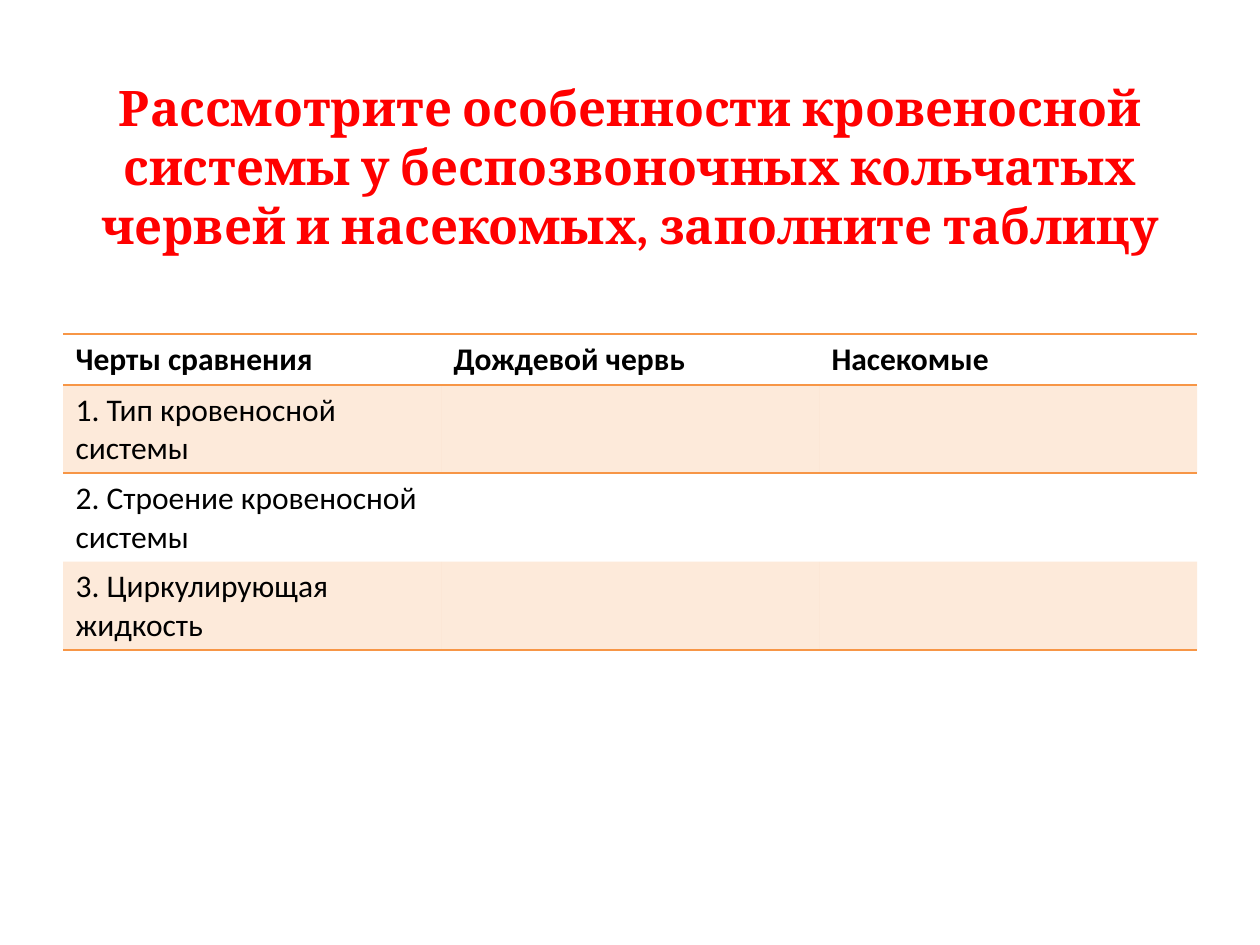
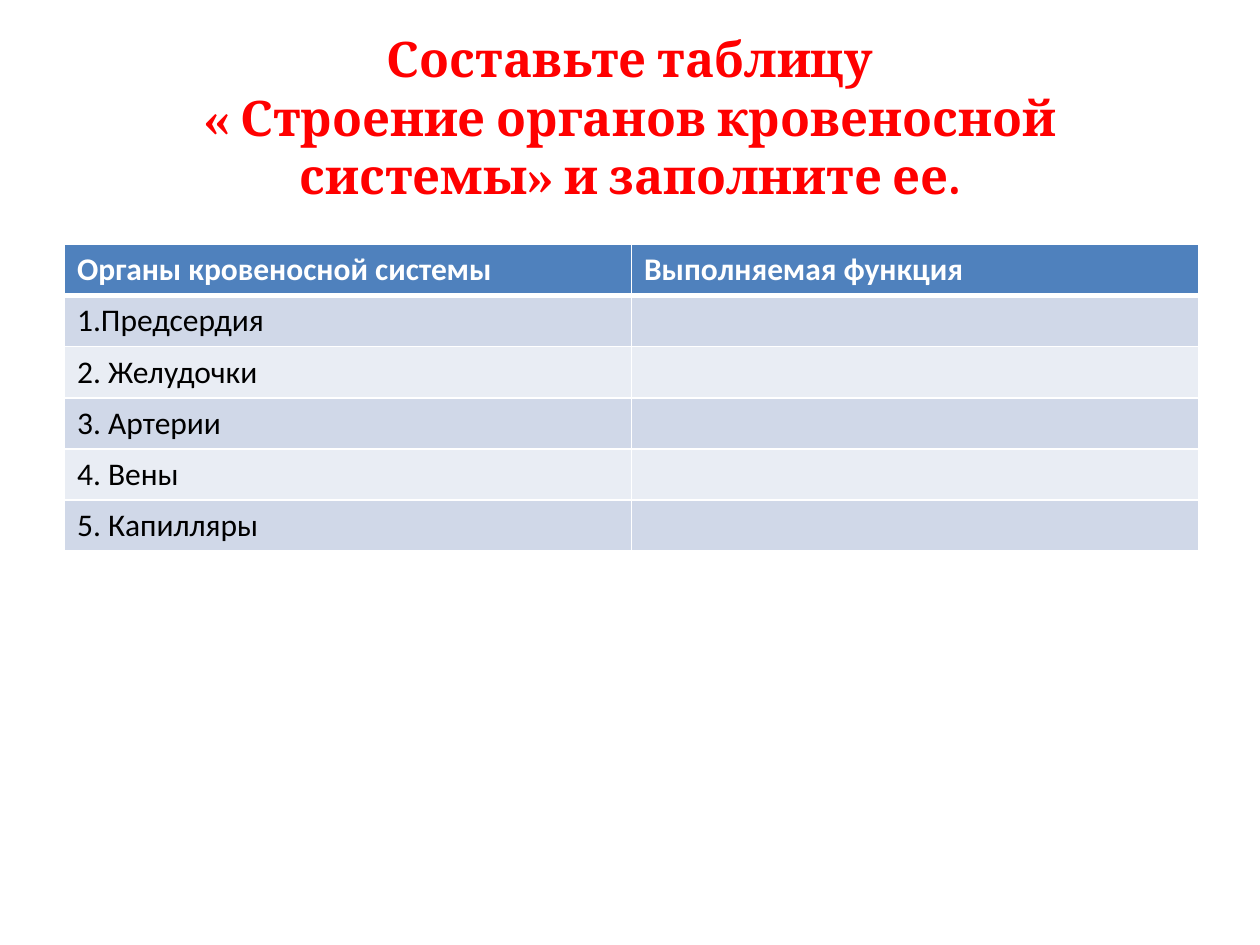
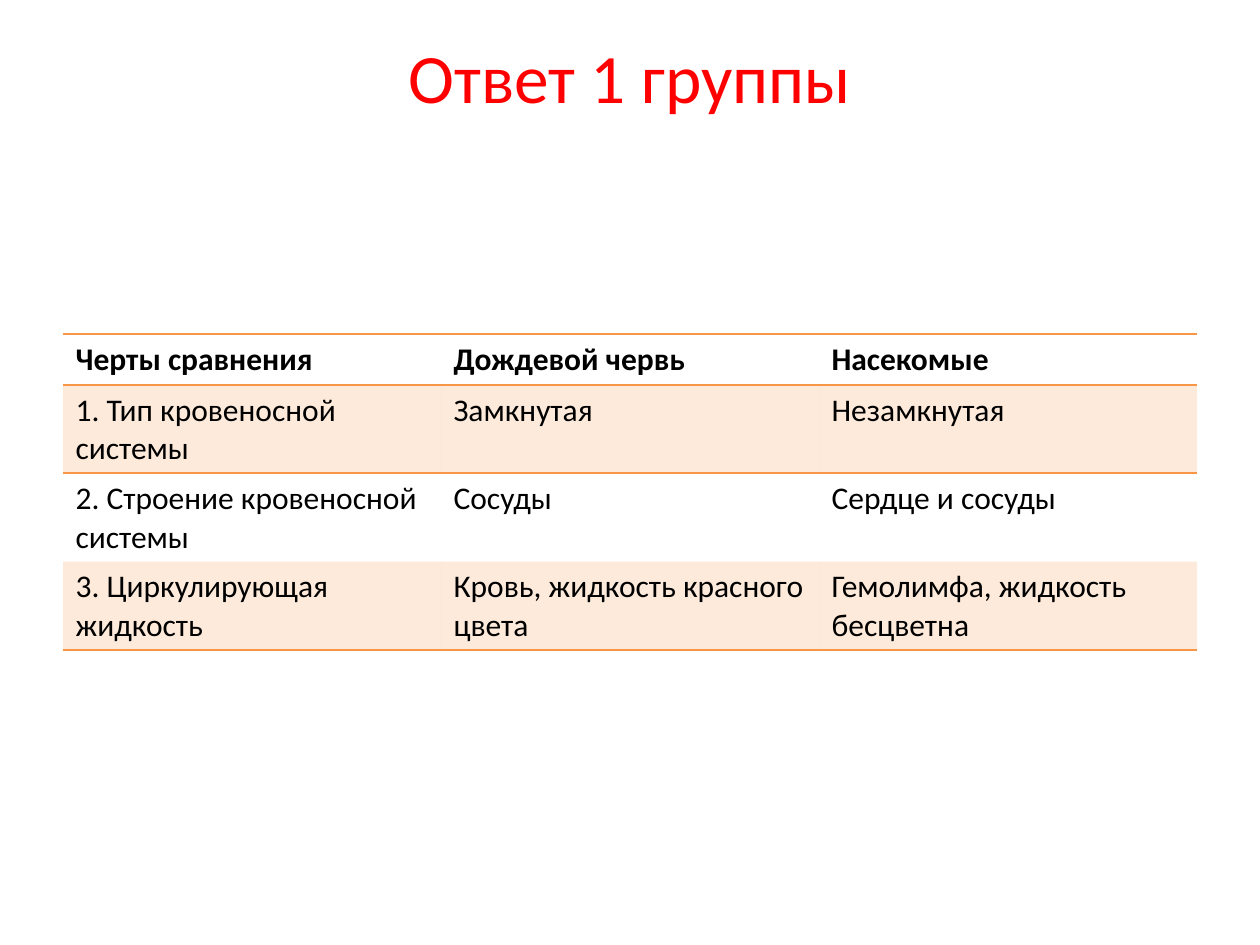
"""Build three lesson slides with tables about the circulatory system."""
from pptx import Presentation
from pptx.dml.color import RGBColor
from pptx.enum import text
from pptx.oxml import ns, xmlchemy
from pptx.util import Cm, Pt

RED = RGBColor(0xFF, 0x00, 0x00)
BLACK = RGBColor(0x00, 0x00, 0x00)
WHITE = RGBColor(0xFF, 0xFF, 0xFF)
ORANGE = RGBColor(0xF7, 0x96, 0x46)
BLUE = RGBColor(0x4F, 0x81, 0xBD)
BLUE_BAND = RGBColor(0xD0, 0xD8, 0xE8)
PALE_BAND = RGBColor(0xE9, 0xED, 0xF4)

NO_STYLE = "{2D5ABB26-0587-4C30-8999-92F81FD0307C}"
MARGIN = 1.27
CONTENT_WIDTH = 22.86
HEADER_HEIGHT = 1.03

FEATURES = ["1. Тип кровеносной системы", "2. Строение кровеносной системы", "3. Циркулирующая жидкость"]
WORM = ["Замкнутая", "Сосуды", "Кровь, жидкость красного цвета"]
INSECTS = ["Незамкнутая", "Сердце и сосуды", "Гемолимфа, жидкость бесцветна"]
COMPARISON_HEADER = ("Черты сравнения", "Дождевой червь", "Насекомые")
ORGANS = ["1.Предсердия", "2. Желудочки", "3. Артерии", "4. Вены", "5. Капилляры"]

LIGHT = {"left": MARGIN, "top": 6.73, "row": 1.78, "ink": BLACK, "line": ORANGE,
         "header_line": 1, "grid": False, "header": None, "bands": (ORANGE, None), "opacity": 20}
MEDIUM = {"left": 1.3, "top": 4.93, "row": HEADER_HEIGHT, "ink": WHITE, "line": WHITE,
          "header_line": 3, "grid": True, "header": BLUE, "bands": (BLUE_BAND, PALE_BAND), "opacity": 100}

SLIDES = [
    ("Рассмотрите особенности кровеносной системы у беспозвоночных кольчатых червей "
     "и насекомых, заполните таблицу",
     5.16, "Cambria", 28, True, LIGHT,
     [COMPARISON_HEADER] + [(feature, "", "") for feature in FEATURES]),
    ("Составьте таблицу\v« Строение органов кровеносной системы» и заполните ее.",
     3.18, "Cambria", 28, True, MEDIUM,
     [("Органы кровеносной системы", "Выполняемая функция")] + [(organ, "") for organ in ORGANS]),
    ("Ответ 1 группы",
     1.55, "Calibri", 39.6, False, LIGHT,
     [COMPARISON_HEADER] + list(zip(FEATURES, WORM, INSECTS))),
]


def add_border(cell, side, color, width):
    """Draw one edge of a cell; sides must be added in the order L, R, T, B."""
    line = xmlchemy.OxmlElement(f"a:ln{side}")
    line.set("w", str(Pt(width)))
    fill = xmlchemy.OxmlElement("a:solidFill")
    tint = xmlchemy.OxmlElement("a:srgbClr")
    tint.set("val", str(color))
    fill.append(tint)
    line.append(fill)
    cell._tc.get_or_add_tcPr().append(line)


def fill_cell(cell, color, opacity):
    """Fill a cell with a colour at a percentage of opacity, or leave it clear."""
    if color is None:
        cell.fill.background()
        return
    cell.fill.solid()
    cell.fill.fore_color.rgb = color
    if opacity < 100:
        alpha = xmlchemy.OxmlElement("a:alpha")
        alpha.set("val", str(opacity * 1000))
        cell._tc.tcPr.find(ns.qn("a:solidFill"))[0].append(alpha)


deck = Presentation()
deck.slide_width, deck.slide_height = Cm(25.4), Cm(19.05)

for title, title_height, font_name, size, bold, look, rows in SLIDES:
    page = deck.slides.add_slide(deck.slide_layouts[6])

    box = page.shapes.add_textbox(Cm(MARGIN), Cm(0.76), Cm(CONTENT_WIDTH), Cm(title_height))
    box.text_frame.word_wrap = True
    box.text_frame.vertical_anchor = text.MSO_ANCHOR.MIDDLE
    box.text_frame.text = title
    para = box.text_frame.paragraphs[0]
    para.alignment = text.PP_ALIGN.CENTER
    para.font.name, para.font.size, para.font.bold = font_name, Pt(size), bold
    para.font.color.rgb = RED

    last = len(rows) - 1
    table_height = HEADER_HEIGHT + last * look["row"]
    frame = page.shapes.add_table(len(rows), len(rows[0]), Cm(look["left"]), Cm(look["top"]),
                                  Cm(CONTENT_WIDTH), Cm(table_height))
    table = frame.table
    table._tbl.tblPr.find(ns.qn("a:tableStyleId")).text = NO_STYLE

    for index, row in enumerate(rows):
        is_header = index == 0
        table.rows[index].height = Cm(HEADER_HEIGHT if is_header else look["row"])
        widths = {
            "L": 1 if look["grid"] else 0,
            "R": 1 if look["grid"] else 0,
            "T": look["header_line"] if index == 1 else int(is_header or look["grid"]),
            "B": look["header_line"] if is_header else int(index == last or look["grid"]),
        }
        for column, words in enumerate(row):
            cell = table.cell(index, column)
            for side, width in widths.items():
                if width:
                    add_border(cell, side, look["line"], width)
            fill_cell(cell, look["header"] if is_header else look["bands"][(index - 1) % 2], look["opacity"])
            cell.text = words
            para = cell.text_frame.paragraphs[0]
            para.font.name, para.font.size, para.font.bold = "Calibri", Pt(18), is_header
            para.font.color.rgb = look["ink"] if is_header else BLACK

deck.save("out.pptx")
